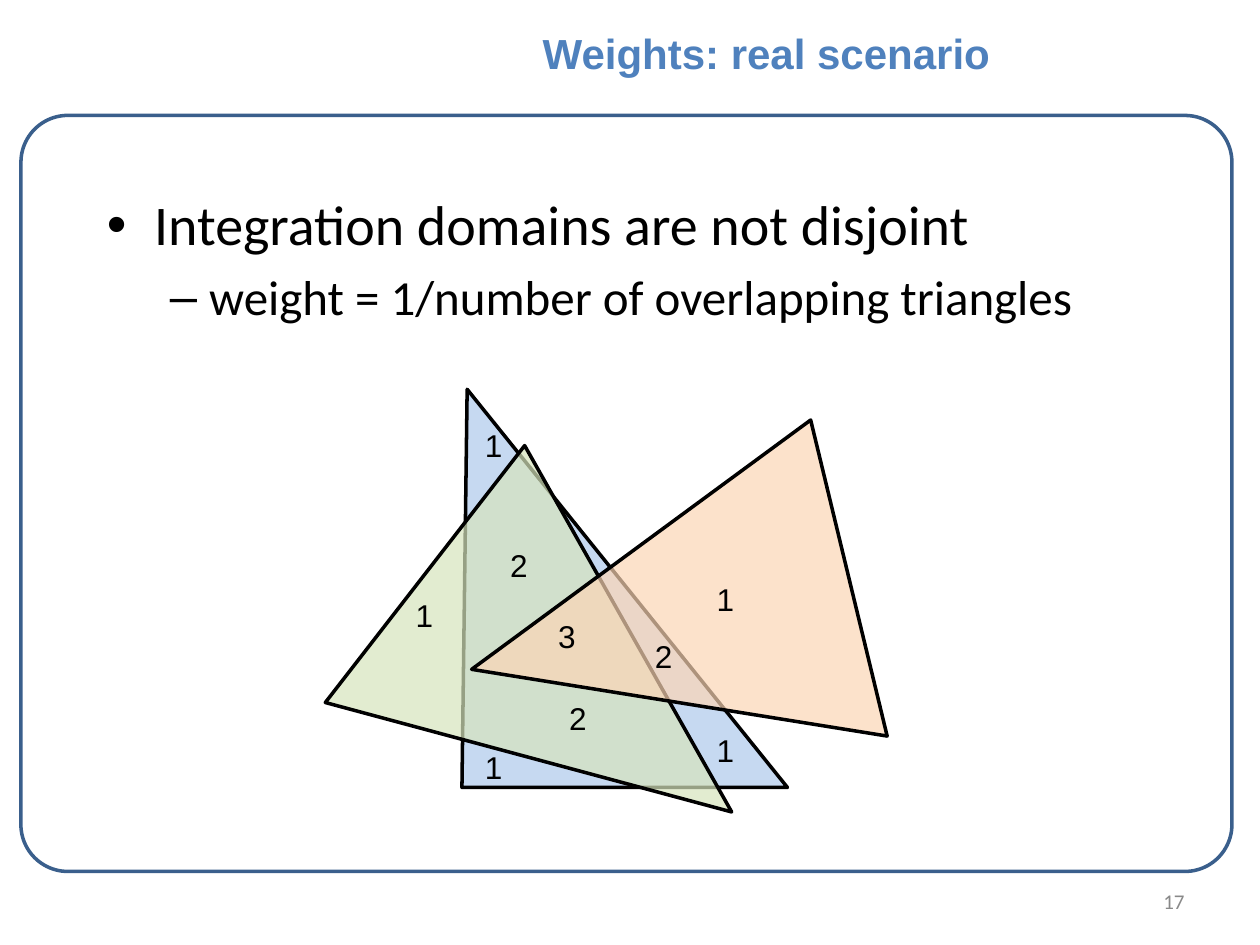
from lxml import etree
from pptx import Presentation
from pptx import util as u
from pptx.dml.color import RGBColor
from pptx.enum import shapes, text
from pptx.oxml.ns import qn


def rgb(value):
    return RGBColor.from_string(value)


class Board:
    """Holds the style and the current slide, and draws each kind of element."""

    ink = "000000"
    label_font = "Arial"
    body_font = "Calibri"
    stroke = 2

    def __init__(self, slide):
        self.slide = slide

    def paint(self, shape, fill, line, opacity=100):
        shape.shadow.inherit = False
        shape.line.color.rgb = rgb(line)
        shape.line.width = u.Pt(self.stroke)
        if fill is None:
            shape.fill.background()
            return
        shape.fill.solid()
        shape.fill.fore_color.rgb = rgb(fill)
        if opacity < 100:
            color = shape.fill._xPr.find(qn("a:solidFill"))[0]
            etree.SubElement(color, qn("a:alpha"), val=str(opacity * 1000))

    def frame(self, left, top, width, height, radius, line):
        border = self.slide.shapes.add_shape(
            shapes.MSO_SHAPE.ROUNDED_RECTANGLE, *map(u.Pt, (left, top, width, height)))
        border.adjustments[0] = radius
        self.paint(border, None, line)

    def polygon(self, corners, fill):
        points = [(u.Pt(x), u.Pt(y)) for x, y in corners]
        builder = self.slide.shapes.build_freeform(*points[0])
        builder.add_line_segments(points[1:], close=True)
        self.paint(builder.convert_to_shape(), fill, self.ink)

    def triangle(self, left, top, width, height, angle, fill, opacity):
        domain = self.slide.shapes.add_shape(
            shapes.MSO_SHAPE.ISOSCELES_TRIANGLE, *map(u.Pt, (left, top, width, height)))
        domain.rotation = angle
        self.paint(domain, fill, self.ink, opacity)

    def box(self, left, top, width, height, wrap=False):
        area = self.slide.shapes.add_textbox(*map(u.Pt, (left, top, width, height))).text_frame
        area.word_wrap = wrap
        if not wrap:
            area.auto_size = text.MSO_AUTO_SIZE.SHAPE_TO_FIT_TEXT
        return area

    def style(self, paragraph, size, color, font, bold=False):
        for run in paragraph.runs:
            run.font.size = u.Pt(size)
            run.font.name = font
            run.font.bold = bold
            run.font.color.rgb = rgb(color)

    def label(self, left, top, width, height, words, size=18, color=ink, bold=False):
        area = self.box(left, top, width, height)
        area.text = words
        self.style(area.paragraphs[0], size, color, self.label_font, bold)

    def page_number(self, left, top, width, height, number, color):
        area = self.box(left, top, width, height, wrap=True)
        area.vertical_anchor = text.MSO_ANCHOR.MIDDLE
        area.text = number
        area.paragraphs[0].alignment = text.PP_ALIGN.RIGHT
        self.style(area.paragraphs[0], 12, color, self.body_font)

    def outline(self, left, top, width, height, items):
        area = self.box(left, top, width, height, wrap=True)
        for level, (words, size, bullet, margin, hanging) in enumerate(items):
            paragraph = area.add_paragraph() if level else area.paragraphs[0]
            paragraph.text = words
            paragraph.level = level
            properties = paragraph._p.get_or_add_pPr()
            properties.set("marL", str(u.Pt(margin)))
            properties.set("indent", str(-u.Pt(hanging)))
            if level:
                paragraph.space_before = u.Pt(size * 0.2)
            etree.SubElement(properties, qn("a:buFont"), typeface=self.label_font)
            etree.SubElement(properties, qn("a:buChar"), char=bullet)
            self.style(paragraph, size, self.ink, self.body_font)


def main():
    deck = Presentation()
    deck.slide_width, deck.slide_height = u.Pt(720), u.Pt(540)
    board = Board(deck.slides.add_slide(deck.slide_layouts[6]))

    board.frame(12, 66, 692, 432, 0.062, "3A5F8C")
    board.page_number(516, 500.5, 168, 28.8, "17", "898989")
    board.outline(54, 105, 612, 381, [
        ("Integration domains are not disjoint", 32, "•", 27, 27),
        ("weight = 1/number of overlapping triangles", 28, "–", 58.5, 22.5),
    ])

    board.polygon([(264, 450), (267, 222.5), (450, 450)], "C6D9F1")
    board.triangle(237.6, 285.1, 185.8, 221.8, 127.8, "D7E4BD", 70)
    board.triangle(284.4, 245.5, 185.8, 221.8, 256.4, "FCD5B5", 69)

    weights = [
        ("1", 402.5, 327.6), ("1", 270, 239.8), ("1", 230.4, 337),
        ("2", 318.2, 396), ("2", 367.2, 360.7), ("2", 284.4, 308.2),
        ("3", 311.8, 349.2), ("1", 270, 424.1), ("1", 402.5, 414),
    ]
    for weight, left, top in weights:
        board.label(left, top, 24.5, 29, weight)

    board.label(303, 12.2, 273, 36, "Weights: real scenario", 24, "4F81BD", bold=True)
    deck.save("out.pptx")


if __name__ == "__main__":
    main()
